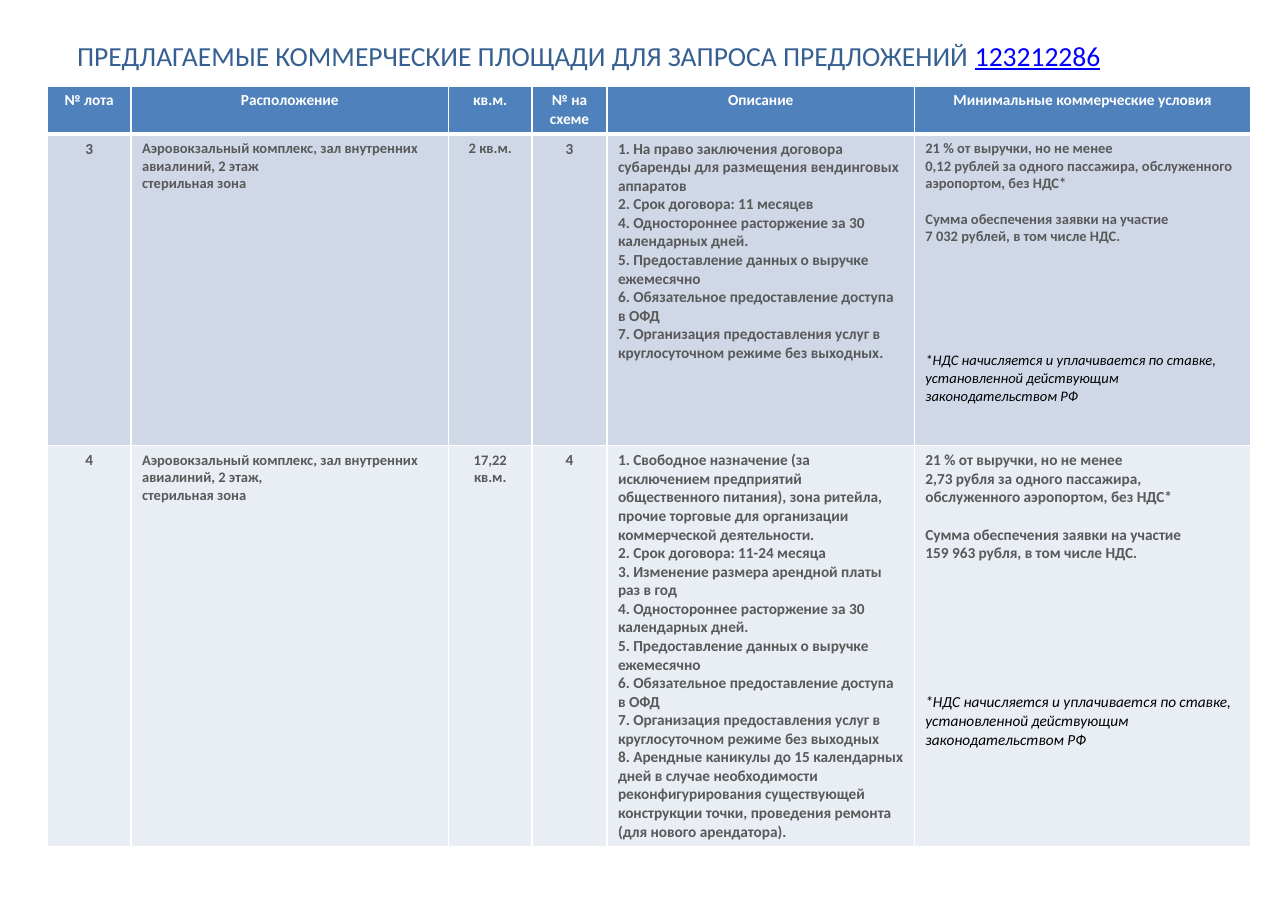
from lxml import etree
from pptx import Presentation
from pptx.dml.color import RGBColor
from pptx.enum import text
from pptx.oxml import ns
from pptx.util import Pt

PX = 9144  # 100 px to the inch
THEME = {
    "font": "Calibri",
    "title": "376092", "link": "0000FF",
    "header": "4F81BD", "header_text": "FFFFFF",
    "bands": ["D0D8E8", "E9EDF4"],
    "body": "595959", "note": "000000", "border": "FFFFFF",
    "title_size": 18, "size": 10, "small": 9.5,
    "line_height": 1.22, "thin": 1, "thick": 3,
}
CENTER, LEFT = text.PP_ALIGN.CENTER, text.PP_ALIGN.LEFT


def write(frame, words, size=THEME["size"], color=THEME["body"], bold=True, italic=False,
          underline=False, align=LEFT, lines_before=0, same_line=False):
    """Add a paragraph, or continue the last one, with its format."""
    para = frame.paragraphs[-1]
    if para.runs and not same_line:
        para = frame.add_paragraph()
    para.alignment = align
    para.space_before = Pt(round(lines_before * size * THEME["line_height"], 1))
    span = para.add_run()
    span.text = words
    span.font.name, span.font.size = THEME["font"], Pt(size)
    span.font.bold, span.font.italic, span.font.underline = bold, italic, underline
    span.font.color.rgb = RGBColor.from_string(color)


def paint(cell, fill, top, bottom):
    """Fill a cell and draw its four borders."""
    cell.fill.solid()
    cell.fill.fore_color.rgb = RGBColor.from_string(fill)
    widths = {"lnL": THEME["thin"], "lnR": THEME["thin"], "lnT": top, "lnB": bottom}
    for place, (side, width) in enumerate(widths.items()):
        line = etree.Element(ns.qn("a:" + side), w=str(Pt(width)))
        solid = etree.SubElement(line, ns.qn("a:solidFill"))
        etree.SubElement(solid, ns.qn("a:srgbClr"), val=THEME["border"])
        cell._tc.get_or_add_tcPr().insert(place, line)


# Wording
HEADERS = ["№ лота", "Расположение", "кв.м.", "№ на схеме", "Описание",
           "Минимальные коммерческие условия"]
NOTE = "*НДС начисляется и уплачивается по ставке, установленной действующим законодательством РФ"
TERMINATION = "4. Одностороннее расторжение за 30 календарных дней."
REVENUE = "5. Предоставление данных о выручке ежемесячно"
FISCAL = "6. Обязательное предоставление доступа в ОФД"
SERVICE = "7. Организация предоставления услуг в круглосуточном режиме без выходных"
LOTS = [
    {
        "number": "3", "area": "2 кв.м.",
        "place": "Аэровокзальный комплекс, зал внутренних авиалиний, 2 этаж",
        "description": [
            "1. На право заключения договора субаренды для размещения вендинговых аппаратов",
            "2. Срок договора: 11 месяцев",
            TERMINATION, REVENUE, FISCAL, SERVICE + ".",
        ],
        "rate": "0,12 рублей за одного пассажира, обслуженного аэропортом, без НДС*",
        "deposit": "7 032 рублей, в том числе НДС.",
        "terms_size": THEME["small"], "note_gap": 6,
    },
    {
        "number": "4", "area": "17,22 кв.м.",
        "place": "Аэровокзальный комплекс, зал внутренних авиалиний, 2 этаж,",
        "description": [
            "1. Свободное назначение (за исключением предприятий общественного питания), "
            "зона ритейла, прочие торговые для организации коммерческой деятельности.",
            "2. Срок договора: 11-24 месяца",
            "3. Изменение размера арендной платы раз в год",
            TERMINATION, REVENUE, FISCAL, SERVICE,
            "8. Арендные каникулы до 15 календарных дней в случае необходимости "
            "реконфигурирования существующей конструкции точки, проведения ремонта "
            "(для нового арендатора).",
        ],
        "rate": "2,73 рубля за одного пассажира, обслуженного аэропортом, без НДС*",
        "deposit": "159 963 рубля, в том числе НДС.",
        "terms_size": THEME["size"], "note_gap": 7,
    },
]

# Page
deck = Presentation()
deck.slide_width, deck.slide_height = 1169 * PX, 827 * PX
page = deck.slides.add_slide(deck.slide_layouts.get_by_name("Title Only"))

# Title
title = page.shapes.title
title.left, title.top, title.width, title.height = [n * PX for n in (60, 30, 1067, 40)]
frame = title.text_frame
frame.word_wrap = True
frame.auto_size = text.MSO_AUTO_SIZE.NONE
frame.vertical_anchor = text.MSO_ANCHOR.TOP
write(frame, "ПРЕДЛАГАЕМЫЕ КОММЕРЧЕСКИЕ ПЛОЩАДИ ДЛЯ ЗАПРОСА ПРЕДЛОЖЕНИЙ ",
      size=THEME["title_size"], color=THEME["title"], bold=False)
write(frame, "123212286", size=THEME["title_size"], color=THEME["link"], bold=False,
      underline=True, same_line=True)

# Table grid
columns, rows = [76, 288, 76, 68, 279, 305], [43, 283, 354]
table = page.shapes.add_table(len(rows), len(columns), 43 * PX, 78 * PX,
                              sum(columns) * PX, sum(rows) * PX).table
for column, width in zip(table.columns, columns):
    column.width = width * PX
for row, height in zip(table.rows, rows):
    row.height = height * PX

# Header row
for cell, heading in zip(table.rows[0].cells, HEADERS):
    paint(cell, THEME["header"], THEME["thin"], THEME["thick"])
    write(cell.text_frame, heading, color=THEME["header_text"], align=CENTER)

# Lot rows
for index, lot in enumerate(LOTS):
    cells = list(table.rows[index + 1].cells)
    for cell in cells:
        paint(cell, THEME["bands"][index], THEME["thin"] if index else THEME["thick"],
              THEME["thin"])
    number, place, area, scheme, description, terms = [cell.text_frame for cell in cells]

    write(number, lot["number"], align=CENTER)
    write(place, lot["place"], size=THEME["small"])
    write(place, "стерильная зона", size=THEME["small"])
    write(area, lot["area"], size=THEME["small"], align=CENTER)
    write(scheme, lot["number"], align=CENTER)
    for item in lot["description"]:
        write(description, item)

    size = lot["terms_size"]
    write(terms, "21 % от выручки, но не менее", size=size)
    write(terms, lot["rate"], size=size)
    write(terms, "Сумма обеспечения заявки на участие", size=size, lines_before=1)
    write(terms, lot["deposit"], size=size)
    write(terms, NOTE, size=size, color=THEME["note"], bold=False, italic=True,
          lines_before=lot["note_gap"])

deck.save("out.pptx")
